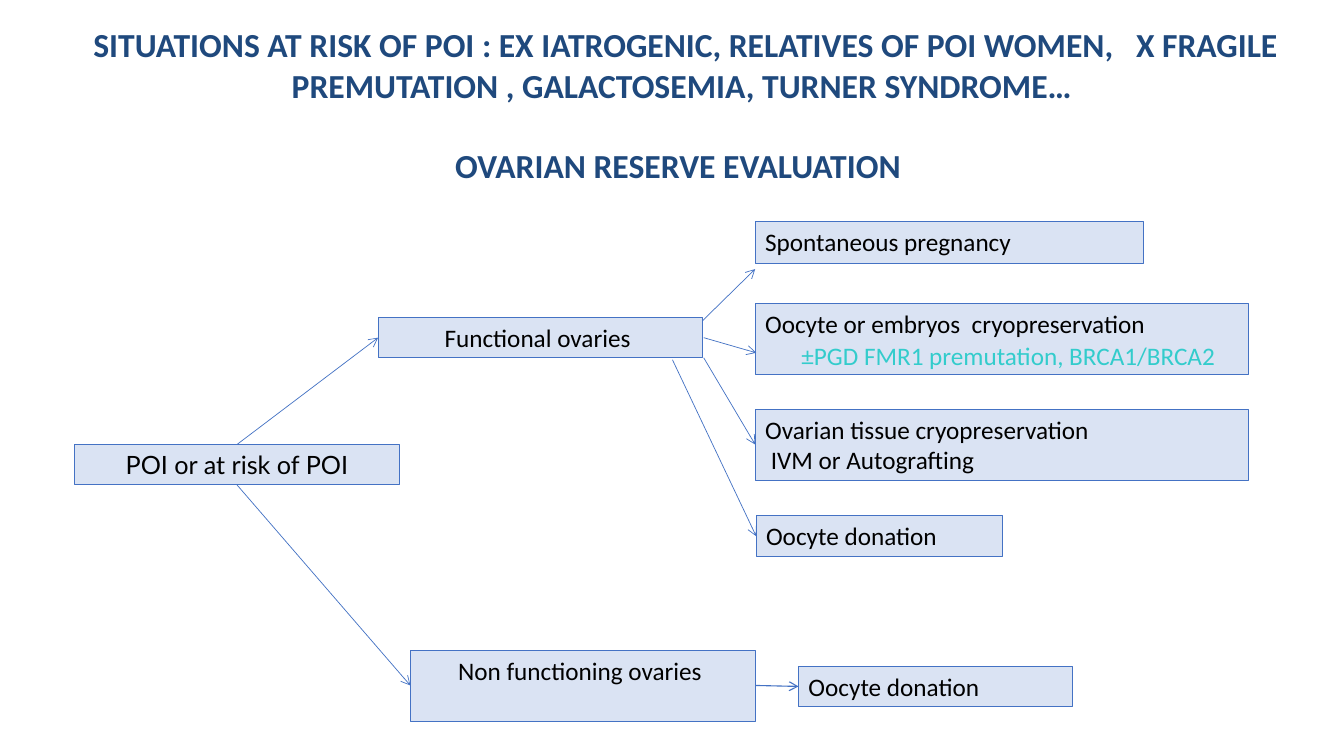
from lxml import etree
from pptx import Presentation
from pptx import util as u
from pptx.dml.color import RGBColor
from pptx.enum import shapes, text
from pptx.oxml.ns import qn

LEFT, CENTER = text.PP_ALIGN.LEFT, text.PP_ALIGN.CENTER


def color(value):
    return RGBColor.from_string(value)


class FlowSlide:
    body = {"name": "Calibri", "size": u.Pt(18), "bold": False}
    heading = {"name": "Calibri", "size": u.Pt(24), "bold": True}
    black, navy, teal = "000000", "1F497D", "33CCCC"
    box_fill, blue = "DAE3F3", "4472C4"

    def __init__(self, deck):
        self.page = deck.slides.add_slide(deck.slide_layouts[6])

    def set_text(self, shape, lines, style, ink, align, gap=0):
        frame = shape.text_frame
        frame.word_wrap = True
        frame.vertical_anchor = text.MSO_ANCHOR.TOP
        for index, line in enumerate(lines):
            para = frame.paragraphs[0] if index == 0 else frame.add_paragraph()
            para.alignment = align
            if index and gap:
                para.space_before = u.Pt(gap)
            span = para.add_run()
            span.text = line
            for name, value in style.items():
                setattr(span.font, name, value)
            span.font.color.rgb = color(ink)

    def label(self, place, lines, style, ink, align=LEFT, gap=0):
        shape = self.page.shapes.add_textbox(*map(u.Inches, place))
        self.set_text(shape, lines, style, ink, align, gap)

    def box(self, place, lines, align=LEFT, font="Calibri"):
        shape = self.page.shapes.add_shape(
            shapes.MSO_SHAPE.RECTANGLE, *map(u.Inches, place))
        shape.shadow.inherit = False
        shape.fill.solid()
        shape.fill.fore_color.rgb = color(self.box_fill)
        shape.line.color.rgb = color(self.blue)
        shape.line.width = u.Pt(0.75)
        self.set_text(shape, lines, {**self.body, "name": font}, self.black, align)

    def arrow(self, start, end, width=0.5):
        arrow = self.page.shapes.add_connector(
            shapes.MSO_CONNECTOR.STRAIGHT, *map(u.Inches, start + end))
        arrow.line.color.rgb = color(self.blue)
        arrow.line.width = u.Pt(width)
        properties = arrow._element.spPr
        etree.SubElement(properties.find(qn("a:ln")), qn("a:tailEnd"), type="arrow")
        etree.SubElement(properties, qn("a:effectLst"))


def main():
    deck = Presentation()
    deck.slide_width, deck.slide_height = u.Inches(13.33), u.Inches(7.5)
    slide = FlowSlide(deck)

    # Heading: the gap is one line of 24 pt text
    slide.label((0.26, 0.19, 13.08, 0.95), [
        "SITUATIONS AT RISK OF POI : EX IATROGENIC, RELATIVES OF POI WOMEN,   "
        "X FRAGILE PREMUTATION , GALACTOSEMIA, TURNER SYNDROME… ",
        "OVARIAN RESERVE EVALUATION  ",
    ], slide.heading, slide.navy, CENTER, gap=29)

    # Starting point and the two ovarian states
    slide.box((0.74, 4.41, 3.22, 0.4), ["POI or at risk of POI"], CENTER, "Lato")
    slide.box((3.75, 3.15, 3.22, 0.4), ["Functional ovaries "], CENTER)
    slide.box((4.07, 6.45, 3.42, 0.71), ["Non functioning ovaries "], CENTER)

    # Options
    options = [
        ((7.49, 2.2, 3.85, 0.41), ["Spontaneous pregnancy"]),
        ((7.49, 3.01, 4.89, 0.71), ["Oocyte or embryos  cryopreservation"]),
        ((7.49, 4.06, 4.89, 0.71),
         ["Ovarian tissue cryopreservation", " IVM or Autografting"]),
        ((7.5, 5.11, 2.44, 0.41), ["Oocyte donation"]),
        ((7.92, 6.61, 2.72, 0.4), ["Oocyte donation"]),
    ]
    for place, lines in options:
        slide.box(place, lines)

    # Arrows
    arrows = [
        ((2.35, 4.41), (3.75, 3.35)),
        ((2.35, 4.81), (4.07, 6.8)),
        ((6.97, 3.18), (7.49, 2.67)),
        ((6.98, 3.35), (7.5, 3.5)),
        ((6.98, 3.55), (7.49, 4.41)),
        ((6.67, 3.57), (7.5, 5.32)),
    ]
    for start, end in arrows:
        slide.arrow(start, end)
    slide.arrow((7.49, 6.8), (7.92, 6.81), width=0.79)

    # Genetic testing note
    slide.label((7.85, 3.33, 4.89, 0.4), ["±PGD FMR1 premutation, BRCA1/BRCA2"],
                slide.body, slide.teal)

    deck.save("out.pptx")


if __name__ == "__main__":
    main()
